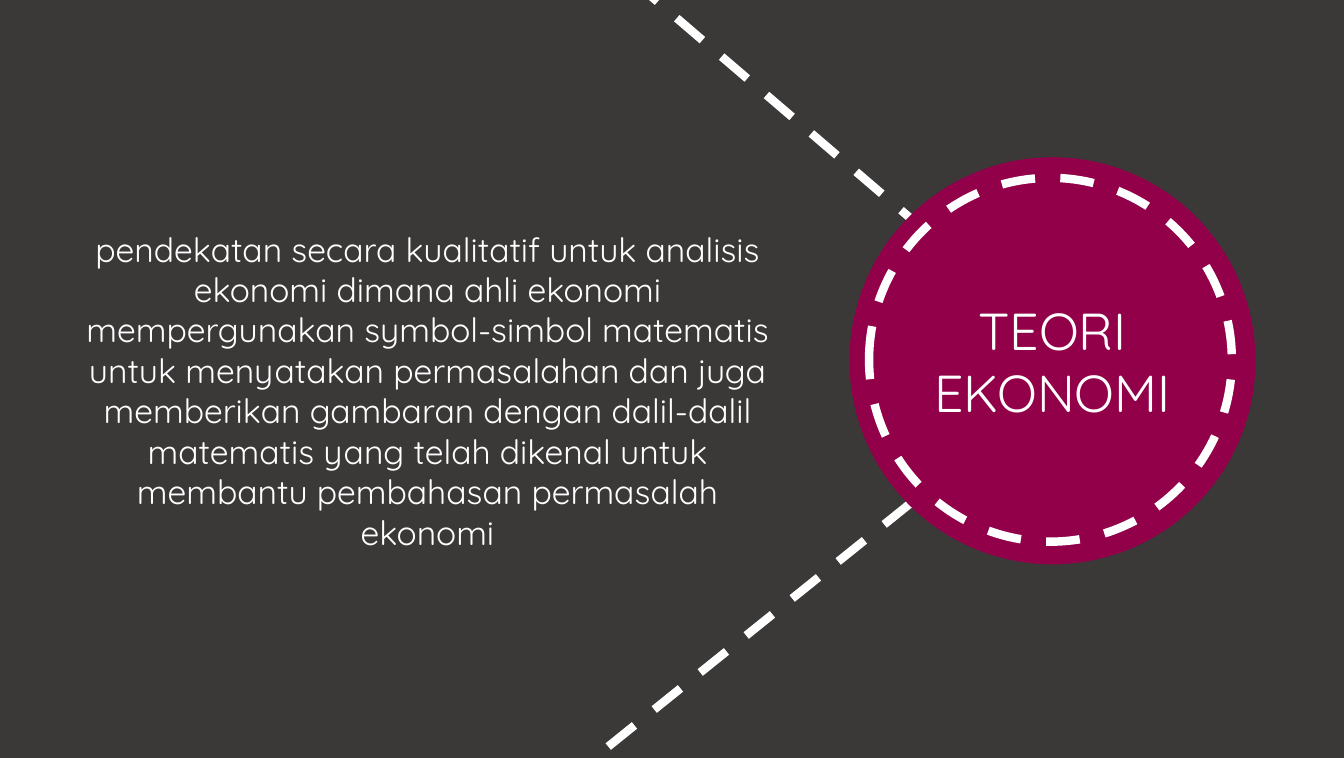
from dataclasses import dataclass
from typing import Optional

from lxml import etree
from pptx import Presentation
from pptx.dml.color import RGBColor
from pptx.enum.dml import MSO_LINE_DASH_STYLE as Dash
from pptx.enum.shapes import MSO_CONNECTOR as Connector, MSO_SHAPE as Shape
from pptx.enum.text import MSO_ANCHOR as Anchor, MSO_AUTO_SIZE as AutoSize, PP_ALIGN as Align
from pptx.oxml.ns import qn
from pptx.util import Inches, Pt

CHARCOAL = RGBColor(0x3B, 0x38, 0x38)
MAGENTA = RGBColor(0x92, 0x00, 0x49)
WHITE = RGBColor(0xFF, 0xFF, 0xFF)
FONT = "Quicksand"

TITLE = "TEORI EKONOMI"
DEFINITION = (
    "pendekatan secara kualitatif untuk analisis ekonomi dimana ahli ekonomi "
    "mempergunakan symbol-simbol matematis untuk menyatakan permasalahan dan juga "
    "memberikan gambaran dengan dalil-dalil matematis yang telah dikenal untuk "
    "membantu pembahasan permasalah ekonomi"
)


@dataclass
class Ray:
    x1: float
    y1: float
    x2: float
    y2: float


@dataclass
class Disc:
    left: float
    top: float
    width: float
    height: float
    line: RGBColor
    weight: float
    fill: Optional[RGBColor] = None
    dashed: bool = False


RAYS = [Ray(5.81, -0.58, 9.01, 2.16), Ray(9.01, 4.98, 3.99, 9.02)]
DISCS = [
    Disc(8.42, 1.57, 3.99, 4, MAGENTA, 2, fill=MAGENTA),
    Disc(8.6, 1.76, 3.59, 3.6, WHITE, 6, dashed=True),
]


def style_line(line, color: RGBColor, weight: float, dashed: bool) -> None:
    line.color.rgb = color
    line.width = Pt(weight)
    if dashed:
        line.dash_style = Dash.DASH


def draw_ray(page, ray: Ray) -> None:
    connector = page.shapes.add_connector(
        Connector.STRAIGHT, Inches(ray.x1), Inches(ray.y1), Inches(ray.x2), Inches(ray.y2))
    style_line(connector.line, WHITE, 6, dashed=True)
    etree.SubElement(connector.element.spPr, qn("a:effectLst"))


def draw_disc(page, disc: Disc) -> None:
    shape = page.shapes.add_shape(
        Shape.OVAL, Inches(disc.left), Inches(disc.top), Inches(disc.width), Inches(disc.height))
    shape.shadow.inherit = False
    if disc.fill is None:
        shape.fill.background()
    else:
        shape.fill.solid()
        shape.fill.fore_color.rgb = disc.fill
    style_line(shape.line, disc.line, disc.weight, disc.dashed)


def write_text(box, text: str, *, size: float, anchor: Anchor,
               inset_x: float = 0.1, inset_y: float = 0.05) -> None:
    frame = box.text_frame
    frame.word_wrap = True
    frame.auto_size = AutoSize.NONE
    frame.vertical_anchor = anchor
    frame.margin_left = frame.margin_right = Inches(inset_x)
    frame.margin_top = frame.margin_bottom = Inches(inset_y)
    para = frame.paragraphs[0]
    para.alignment = Align.CENTER
    span = para.add_run()
    span.text = text
    span.font.name = FONT
    span.font.size = Pt(size)
    span.font.color.rgb = WHITE


def main() -> None:
    deck = Presentation()
    deck.slide_width, deck.slide_height = Inches(13.3), Inches(7.5)
    page = deck.slides.add_slide(deck.slide_layouts[5])
    page.background.fill.solid()
    page.background.fill.fore_color.rgb = CHARCOAL

    # Definition on the left
    definition = page.shapes.add_textbox(Inches(0.59), Inches(2.19), Inches(7.28), Inches(3.38))
    write_text(definition, DEFINITION, size=24, anchor=Anchor.TOP, inset_x=0.13, inset_y=0.07)

    # Dashed rays, then the disc and its dashed ring
    for ray in RAYS:
        draw_ray(page, ray)
    for disc in DISCS:
        draw_disc(page, disc)

    # Title, brought in front of the disc
    title = page.shapes.title
    title.left, title.top = Inches(9), Inches(2.16)
    title.width, title.height = Inches(2.83), Inches(2.82)
    write_text(title, TITLE, size=37, anchor=Anchor.MIDDLE)
    title.element.getparent().append(title.element)

    deck.save("out.pptx")


if __name__ == "__main__":
    main()
